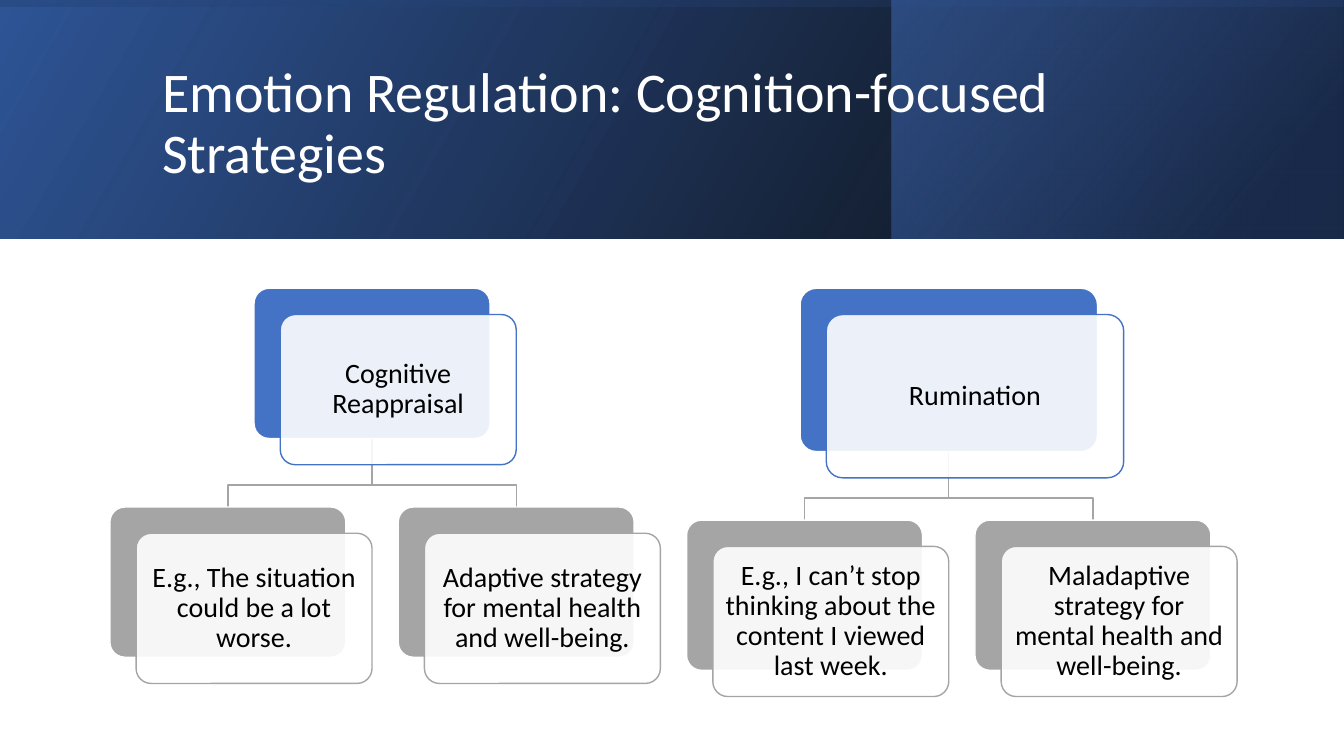
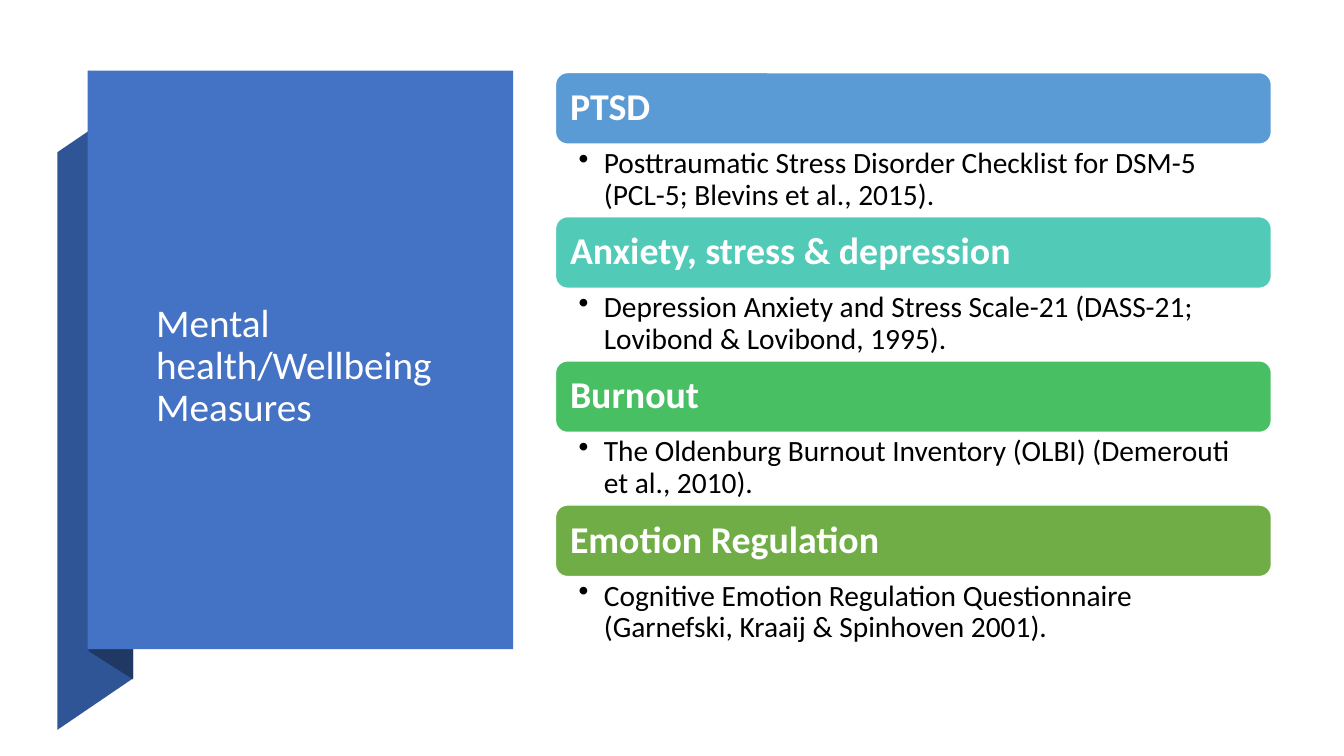
from dataclasses import dataclass

from lxml import etree
from pptx import Presentation
from pptx.dml.color import RGBColor
from pptx.enum.shapes import MSO_SHAPE
from pptx.enum.text import MSO_ANCHOR, PP_ALIGN
from pptx.oxml import parse_xml
from pptx.oxml.ns import nsdecls, qn
from pptx.util import Inches, Pt

RECT, ROUND = MSO_SHAPE.RECTANGLE, MSO_SHAPE.ROUNDED_RECTANGLE
TOP, MIDDLE = MSO_ANCHOR.TOP, MSO_ANCHOR.MIDDLE
LEFT, CENTER = PP_ALIGN.LEFT, PP_ALIGN.CENTER


@dataclass(frozen=True)
class Theme:
    font: str = "Calibri"
    white: str = "FFFFFF"
    black: str = "000000"
    blue: str = "4472C4"
    mid_blue: str = "2F5597"
    navy: str = "203864"
    gray: str = "A5A5A5"
    bars: tuple = ("5B9BD5", "52CAB8", "49BF64", "70AD47")
    title: int = 40
    panel_title: int = 28
    heading: int = 27
    bullet: int = 21
    card: int = 20


T = Theme()


def style(sp, fill=None, line=None, alpha=None):
    """Set fill, outline and opacity (percent) of a shape."""
    sp.shadow.inherit = False
    if fill:
        sp.fill.solid()
        sp.fill.fore_color.rgb = RGBColor.from_string(fill)
    else:
        sp.fill.background()
    if alpha:
        color = sp._element.spPr.find(qn("a:solidFill"))[0]
        etree.SubElement(color, qn("a:alpha")).set("val", str(alpha * 1000))
    if line:
        sp.line.color.rgb = RGBColor.from_string(line)
        sp.line.width = Pt(1)
    else:
        sp.line.fill.background()
    return sp


def add_text(sp, text, size, color=T.black, bold=False, align=LEFT,
             anchor=MIDDLE, margins=(0.1, 0.05, 0.1, 0.05), bullet=False):
    """Write one formatted paragraph; margins are left, top, right, bottom."""
    tf = sp.text_frame
    tf.word_wrap = True
    tf.vertical_anchor = anchor
    (tf.margin_left, tf.margin_top,
     tf.margin_right, tf.margin_bottom) = map(Inches, margins)
    p = tf.paragraphs[0]
    p.alignment = align
    p.line_spacing = 0.9
    if bullet:
        pPr = p._p.get_or_add_pPr()
        pPr.set("marL", str(Inches(0.25)))
        pPr.set("indent", str(-Inches(0.25)))
        etree.SubElement(pPr, qn("a:buChar")).set("char", "•")
    r = p.add_run()
    r.text = text
    r.font.name = T.font
    r.font.size = Pt(size)
    r.font.bold = bold
    r.font.color.rgb = RGBColor.from_string(color)


prs = Presentation()
prs.slide_width, prs.slide_height = Inches(13.33), Inches(7.5)
blank = prs.slide_layouts[6]

# Slide 1: layered gradient band; stops are (position, colour, opacity)
s = prs.slides.add_slide(blank)
bands = [
    ((0, 0, 13.33, 2.37), 0, 330, [(0, T.black, 96), (100, T.mid_blue, 100)]),
    ((8.84, 0, 4.48, 2.37), 0, 320, [(19, T.navy, 68), (100, T.blue, 48)]),
    ((5.48, -5.48, 2.37, 13.33), 270, 350,
     [(23, T.mid_blue, 16), (99, T.black, 45)]),
]
for box, rotation, angle, stops in bands:
    sp = style(s.shapes.add_shape(RECT, *map(Inches, box)))
    sp.rotation = rotation
    spPr = sp._element.spPr
    spPr.xfrm.set("flipH", "1")
    stop_xml = "".join(
        f'<a:gs pos="{pos * 1000}"><a:srgbClr val="{color}">'
        f'<a:alpha val="{alpha * 1000}"/></a:srgbClr></a:gs>'
        for pos, color, alpha in stops)
    gradient = parse_xml(
        f'<a:gradFill {nsdecls("a")}><a:gsLst>{stop_xml}</a:gsLst>'
        f'<a:lin ang="{angle * 60000}" scaled="0"/></a:gradFill>')
    spPr.replace(spPr.find(qn("a:noFill")), gradient)

title = s.shapes.add_textbox(*map(Inches, (1.51, 0.38, 10.63, 1.72)))
add_text(title, "Emotion Regulation: Cognition-focused Strategies",
         T.title, T.white)

# Strategy trees: a root card above two leaf cards
LEAF_W, LEAF_H, LEAF_STEP = 2.34, 1.49, 2.86
ROOT_TOP, LEVEL_GAP, BEND = 2.86, 0.68, 0.46
FIRST_ROOT_X = 3.69
trees = [
    ("Cognitive Reappraisal", 2.34, 1.49,
     ["E.g., The situation could be a lot worse.",
      "Adaptive strategy for mental health and well-being."]),
    ("Rumination", 2.95, 1.62,
     ["E.g., I can’t stop thinking about the content I viewed last week.",
      "Maladaptive strategy for mental health and well-being."]),
]
cards = []
for i, (root, root_w, root_h, leaves) in enumerate(trees):
    root_x = FIRST_ROOT_X + i * 2 * LEAF_STEP
    root_bottom = ROOT_TOP + root_h
    leaf_top = root_bottom + LEVEL_GAP
    cards.append((root, root_x, ROOT_TOP, root_w, root_h, T.blue))
    for side, leaf in zip((-0.5, 0.5), leaves):
        leaf_x = root_x + side * LEAF_STEP
        cards.append((leaf, leaf_x, leaf_top, LEAF_W, LEAF_H, T.gray))
        bend_y = root_bottom + BEND
        branch = s.shapes.build_freeform(Inches(root_x), Inches(root_bottom))
        branch.add_line_segments(
            [(Inches(x), Inches(y)) for x, y in
             ((root_x, bend_y), (leaf_x, bend_y), (leaf_x, leaf_top))],
            close=False)
        style(branch.convert_to_shape(), line=T.gray)

# Each card is a solid back plate and a translucent front plate
for text, center, top, w, h, color in cards:
    left = center - w / 2
    for offset, fill, line, alpha in ((0, color, T.white, None),
                                      (0.26, T.white, color, 90)):
        sp = s.shapes.add_shape(ROUND, Inches(left + offset),
                                Inches(top + offset), Inches(w), Inches(h))
        sp.adjustments[0] = 0.1
        style(sp, fill, line, alpha)
    add_text(sp, text, T.card, align=CENTER, margins=(0.08,) * 4)

# Slide 2: folded ribbon behind the title panel
s = prs.slides.add_slide(blank)
folds = [
    (T.mid_blue, [(0.57, 7.24), (1.32, 6.73), (1.32, 1), (0.57, 1.51)]),
    (T.navy, [(0.88, 6.46), (1.32, 6.74), (1.32, 0.99), (0.88, 0.7)]),
]
for color, points in folds:
    start, *rest = [(Inches(x), Inches(y)) for x, y in points]
    fold = s.shapes.build_freeform(*start)
    fold.add_line_segments(rest, close=True)
    style(fold.convert_to_shape(), color)
style(s.shapes.add_shape(RECT, *map(Inches, (0.87, 0.7, 4.22, 5.74))), T.blue)
title = s.shapes.add_textbox(*map(Inches, (1.45, 1.67, 3.01, 3.94)))
add_text(title, "Mental health/Wellbeing Measures", T.panel_title, T.white)

# Measures: a coloured heading bar and a bullet under it
LIST_X, LIST_W, LIST_TOP = 5.51, 7.1, 0.72
BAR_H, BULLET_H = 0.71, 0.72
measures = [
    ("PTSD", "Posttraumatic Stress Disorder Checklist for DSM-5 "
             "(PCL-5; Blevins et al., 2015)."),
    ("Anxiety, stress & depression",
     "Depression Anxiety and Stress Scale-21 (DASS-21; "
     "Lovibond & Lovibond, 1995)."),
    ("Burnout",
     "The Oldenburg Burnout Inventory (OLBI) (Demerouti et al., 2010)."),
    ("Emotion Regulation", "Cognitive Emotion Regulation Questionnaire "
                           "(Garnefski, Kraaij & Spinhoven 2001)."),
]
for i, ((heading, measure), color) in enumerate(zip(measures, T.bars)):
    top = LIST_TOP + i * (BAR_H + BULLET_H)
    bar = s.shapes.add_shape(
        ROUND, *map(Inches, (LIST_X, top, LIST_W, BAR_H)))
    style(bar, color, T.white)
    add_text(bar, heading, T.heading, T.white, bold=True, margins=(0.11,) * 4)
    box = s.shapes.add_textbox(
        *map(Inches, (LIST_X, top + BAR_H, LIST_W, BULLET_H)))
    add_text(box, measure, T.bullet, anchor=TOP,
             margins=(0.23, 0.04, 0.21, 0.04), bullet=True)

prs.save("out.pptx")
